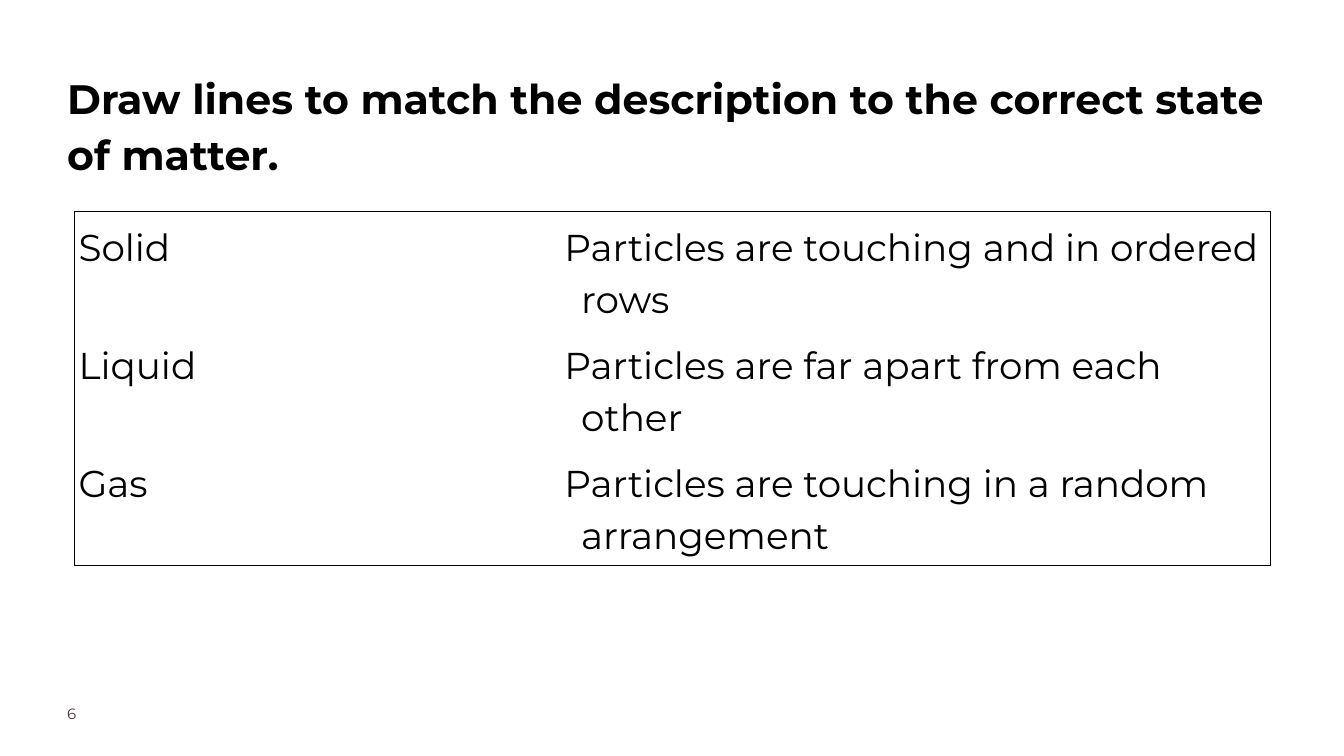
from lxml import etree
from pptx import Presentation
from pptx.dml.color import RGBColor
from pptx.enum.text import MSO_ANCHOR, PP_ALIGN
from pptx.oxml.ns import qn
from pptx.util import Inches, Pt

TOP = MSO_ANCHOR.TOP
LEFT = PP_ALIGN.LEFT

TITLE = "Draw lines to match the description to the correct state of matter."
PAGE = "6"
PAIRS = [
    ("Solid", "Particles are touching and in ordered rows"),
    ("Liquid", "Particles are far apart from each other"),
    ("Gas", "Particles are touching in a random arrangement"),
]
THEME = {
    "font": "Montserrat",
    "ink": "000000",
    "muted": "4B3241",
    "title": 44,
    "body": 40,
    "page": 16,
    "rule": 1,
    "lines": 1.15,
}
COLS = (4.87, 2.36, 10.57)
ROW = 1.75
HANG = 0.25


def write(para, text, size, ink, bold=False):
    para.alignment = LEFT
    run = para.add_run()
    run.text = text
    font = run.font
    font.name = THEME["font"]
    font.size = Pt(size)
    font.bold = bold
    font.color.rgb = RGBColor.from_string(ink)


def set_frame(frame):
    frame.word_wrap = True
    frame.vertical_anchor = TOP
    frame.margin_left = frame.margin_right = 0
    frame.margin_top = frame.margin_bottom = 0


def set_edges(cell, edges):
    """Rule the sides that are true in edges and clear the others."""
    props = cell._tc.get_or_add_tcPr()
    for spot, (side, shown) in enumerate(edges.items()):
        line = etree.Element(qn(f"a:ln{side}"), w=str(Pt(THEME["rule"])))
        if shown:
            fill = etree.SubElement(line, qn("a:solidFill"))
            etree.SubElement(fill, qn("a:srgbClr"), val=THEME["ink"])
        else:
            etree.SubElement(line, qn("a:noFill"))
        props.insert(spot, line)


def add_title(slide):
    title = slide.shapes.title
    title.left, title.top = Inches(1), Inches(0.98)
    title.width, title.height = Inches(17.99), Inches(1.78)
    set_frame(title.text_frame)
    para = title.text_frame.paragraphs[0]
    para.line_spacing = THEME["lines"]
    write(para, TITLE, THEME["title"], THEME["ink"], True)


def add_page(slide):
    box = slide.shapes.add_textbox(
        Inches(1), Inches(10.48), Inches(1.57), Inches(0.39))
    set_frame(box.text_frame)
    write(box.text_frame.paragraphs[0], PAGE, THEME["page"], THEME["muted"])


def add_match(slide):
    count = len(PAIRS)
    table = slide.shapes.add_table(
        count, len(COLS), Inches(1.1), Inches(3.15),
        Inches(sum(COLS)), Inches(ROW * count)).table
    table.first_row = table.horz_banding = False
    for col, width in zip(table.columns, COLS):
        col.width = Inches(width)

    last = len(COLS) - 1
    for r, (state, clue) in enumerate(PAIRS):
        for c, text in enumerate((state, "", clue)):
            cell = table.cell(r, c)
            cell.fill.background()
            cell.vertical_anchor = TOP
            cell.margin_left = cell.margin_right = Inches(0.07)
            cell.margin_top = cell.margin_bottom = Inches(0.1)
            set_edges(cell, {"L": c == 0, "R": c == last,
                             "T": r == 0, "B": r == count - 1})
            if not text:
                continue
            para = cell.text_frame.paragraphs[0]
            para.line_spacing = THEME["lines"]
            if c == last:
                props = para._p.get_or_add_pPr()
                props.set("marL", str(Inches(HANG)))
                props.set("indent", str(-Inches(HANG)))
            write(para, text, THEME["body"], THEME["ink"])


def main():
    deck = Presentation()
    deck.slide_width, deck.slide_height = Inches(20), Inches(11.25)
    slide = deck.slides.add_slide(deck.slide_layouts[5])
    add_title(slide)
    add_match(slide)
    add_page(slide)
    deck.save("out.pptx")


if __name__ == "__main__":
    main()
